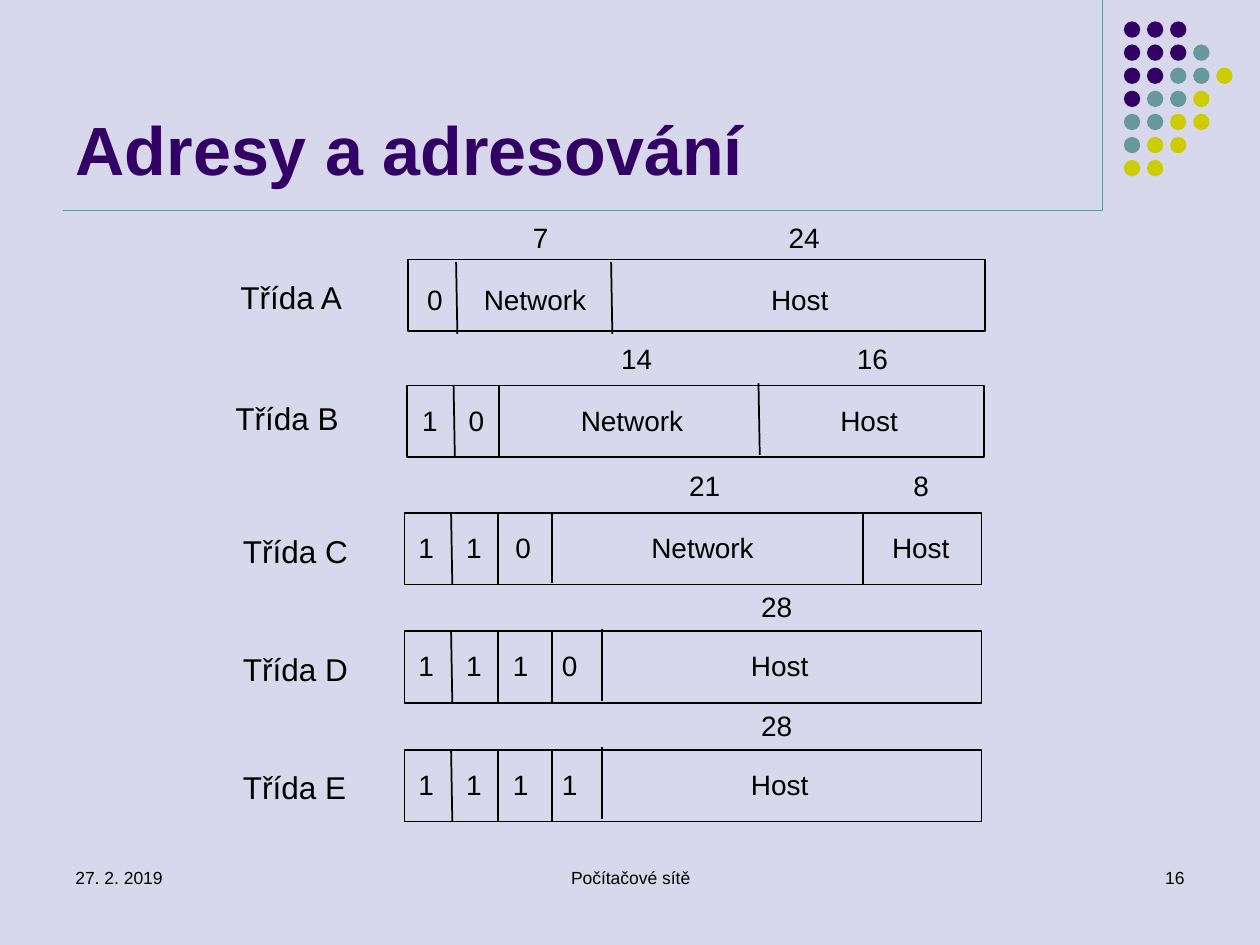
from lxml import etree
from pptx import Presentation
from pptx.dml.color import RGBColor
from pptx.enum import shapes, text
from pptx.oxml.ns import qn
from pptx.util import Inches, Pt

BACKGROUND = RGBColor(0xD8, 0xD8, 0xEC)
PURPLE = RGBColor(0x33, 0x00, 0x66)
TEAL = RGBColor(0x66, 0x99, 0x99)
YELLOW = RGBColor(0xCC, 0xCC, 0x00)
BLACK = RGBColor(0x00, 0x00, 0x00)

deck = Presentation()
deck.slide_width, deck.slide_height = Inches(10), Inches(7.5)
page = deck.slides.add_slide(deck.slide_layouts[5])
page.background.fill.solid()
page.background.fill.fore_color.rgb = BACKGROUND


def add_line(x1, y1, x2, y2, color, width):
    line = page.shapes.add_connector(
        shapes.MSO_CONNECTOR.STRAIGHT, Inches(x1), Inches(y1), Inches(x2), Inches(y2))
    line.line.color.rgb = color
    line.line.width = Pt(width)
    etree.SubElement(line._element.spPr, qn("a:effectLst"))


def add_text(words, left, top, width, height, size, inset=True, wrap=False,
             align=text.PP_ALIGN.LEFT):
    box = page.shapes.add_textbox(Inches(left), Inches(top), Inches(width), Inches(height))
    frame = box.text_frame
    frame.word_wrap = wrap
    if not inset:
        frame.margin_left = frame.margin_right = frame.margin_top = frame.margin_bottom = 0
    if not wrap:
        frame.auto_size = text.MSO_AUTO_SIZE.SHAPE_TO_FIT_TEXT
    frame.text = words
    para = frame.paragraphs[0]
    para.alignment = align
    font = para.runs[0].font
    font.name, font.size, font.color.rgb = "Arial", Pt(size), BLACK


add_line(8.75, 0, 8.75, 1.67, TEAL, 0.75)
add_line(0.5, 1.67, 8.75, 1.67, TEAL, 0.75)

dot_colors = {"P": PURPLE, "T": TEAL, "Y": YELLOW}
dot_rows = ["PPP", "PPPT", "PPTTY", "PTTY", "TTYY", "TYY", "YY"]
dot_pitch = 0.55 / 3
for row, letters in enumerate(dot_rows):
    for column, letter in enumerate(letters):
        dot = page.shapes.add_shape(
            shapes.MSO_SHAPE.OVAL, Inches(8.92 + column * dot_pitch),
            Inches(0.17 + row * dot_pitch), Inches(0.13), Inches(0.13))
        dot.shadow.inherit = False
        dot.fill.solid()
        dot.fill.fore_color.rgb = dot_colors[letter]
        dot.line.fill.background()

title = page.shapes.title
title.left, title.top, title.width, title.height = (
    Inches(0.5), Inches(0.13), Inches(8.25), Inches(1.42))
title.text_frame.text = "Adresy a adresování"
title.text_frame.vertical_anchor = text.MSO_ANCHOR.BOTTOM
title_para = title.text_frame.paragraphs[0]
title_para.alignment = text.PP_ALIGN.LEFT
title_font = title_para.runs[0].font
title_font.name, title_font.size, title_font.bold = "Arial", Pt(39), True
title_font.color.rgb = PURPLE

field_widths = {"Network": 0.83, "Host": 0.47}
bar_width, bar_height = 4.58, 0.57
multicast_dividers = [(3.58, 3.59, 0), (3.95, 3.95, 0), (4.38, 4.38, 0), (4.78, 4.78, -0.02)]
address_classes = [
    ("Třída A", 1.81, 2.16, 3.24, 2.06,
     [(3.62, 3.63, 0.02), (4.85, 4.86, 0.02)],
     2.24, [("0", 3.39), ("Network", 3.84), ("Host", 6.12)],
     1.75, [("7", 4.23), ("24", 6.26)]),
    ("Třída B", 1.77, 3.12, 3.23, 3.06,
     [(3.6, 3.61, 0), (3.96, 3.96, 0), (6.02, 6.03, -0.02)],
     3.2, [("1", 3.35), ("0", 3.72), ("Network", 4.61), ("Host", 6.67)],
     2.71, [("14", 4.93), ("16", 6.8)]),
    ("Třída C", 1.83, 4.17, 3.21, 4.07,
     [(3.58, 3.59, 0), (3.95, 3.95, 0), (4.38, 4.38, -0.01), (6.85, 6.85, 0)],
     4.21, [("1", 3.32), ("1", 3.7), ("0", 4.09), ("Network", 5.17), ("Host", 7.08)],
     3.72, [("21", 5.47), ("8", 7.25)]),
    ("Třída D", 1.83, 5.11, 3.21, 5.01, multicast_dividers,
     5.15, [("1", 3.32), ("1", 3.7), ("1", 4.07), ("0", 4.46), ("Host", 5.96)],
     4.68, [("28", 6.04)]),
    ("Třída E", 1.83, 6.05, 3.21, 5.95, multicast_dividers,
     6.09, [("1", 3.32), ("1", 3.7), ("1", 4.07), ("1", 4.46), ("Host", 5.96)],
     5.62, [("28", 6.04)]),
]

for (name, label_left, label_top, bar_left, bar_top, dividers,
     field_top, fields, count_top, counts) in address_classes:
    bar = page.shapes.add_shape(
        shapes.MSO_SHAPE.RECTANGLE, Inches(bar_left), Inches(bar_top),
        Inches(bar_width), Inches(bar_height))
    bar.shadow.inherit = False
    bar.fill.background()
    bar.line.color.rgb = BLACK
    bar.line.width = Pt(1)
    for top_x, bottom_x, shift in dividers:
        top = bar_top + shift
        add_line(top_x, top, bottom_x, top + bar_height, BLACK, 1)
    add_text(name, label_left, label_top, 1.05, 0.4, 18)
    for top, entries in ((field_top, fields), (count_top, counts)):
        for words, left in entries:
            width = field_widths.get(words, 0.13 * len(words))
            add_text(words, left, top, width, 0.27, 16, inset=False)

footers = [
    ("27. 2. 2019", 0.5, 2.33, text.PP_ALIGN.LEFT),
    ("Počítačové sítě", 3.42, 3.17, text.PP_ALIGN.CENTER),
    ("16", 7.17, 2.33, text.PP_ALIGN.RIGHT),
]
for words, left, width, align in footers:
    add_text(words, left, 6.83, width, 0.5, 10, wrap=True, align=align)

deck.save("out.pptx")
